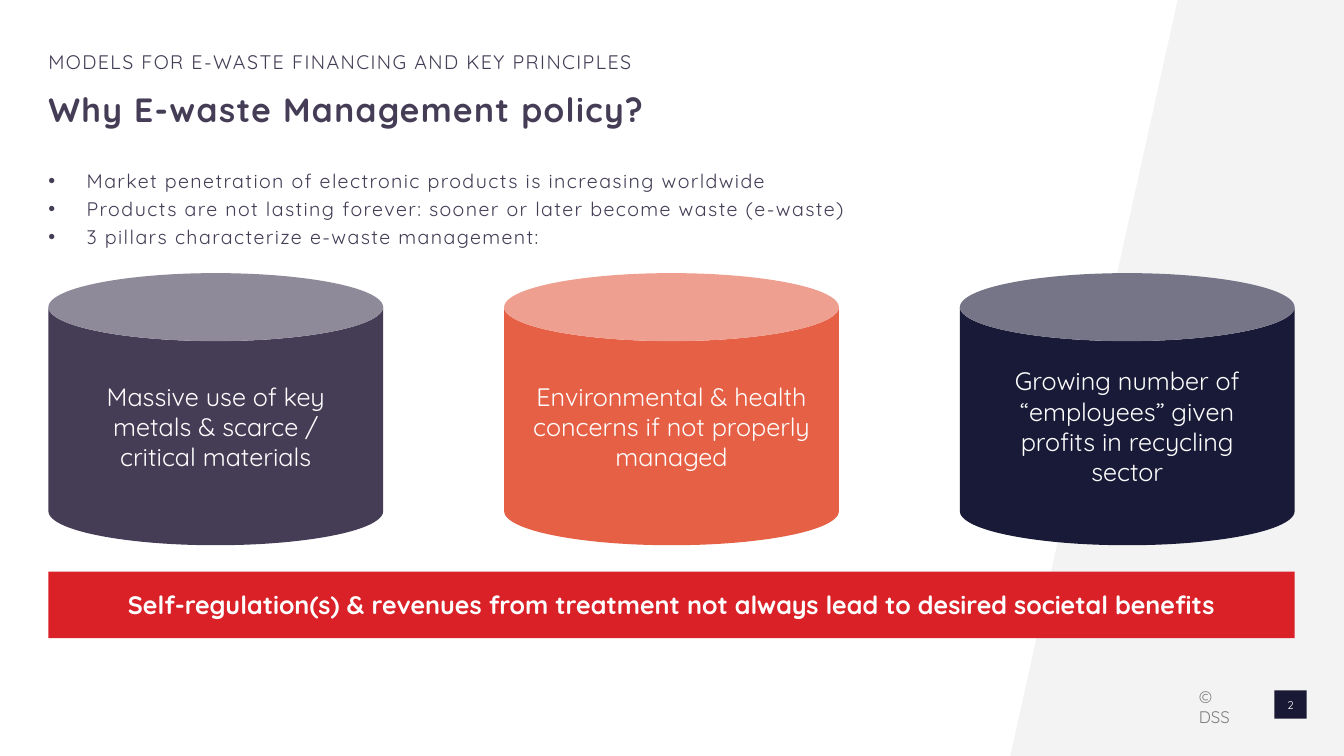
from lxml import etree
from pptx import Presentation
from pptx import util as u
from pptx.dml.color import RGBColor
from pptx.enum import shapes, text
from pptx.oxml import ns

INK = {"plum": "453D56", "coral": "E56045", "navy": "191A37", "badge": "191936",
       "red": "DA2128", "pale": "F3F3F3", "gray": "808080", "white": "FFFFFF"}
FONT = "Quicksand"
LEFT, WIDE = 0.48, 12.36
KIND = shapes.MSO_SHAPE


def paint(shape, ink):
    shape.shadow.inherit = False
    shape.fill.solid()
    shape.fill.fore_color.rgb = RGBColor.from_string(INK[ink])
    shape.line.fill.background()


def bullet(para, indent):
    props = para._p.get_or_add_pPr()
    props.set("marL", str(u.Inches(indent)))
    props.set("indent", str(-u.Inches(indent)))
    etree.SubElement(props, ns.qn("a:buFont")).set("typeface", "Arial")
    etree.SubElement(props, ns.qn("a:buChar")).set("char", "•")


def write(shape, lines, size=18, ink="white", bold=False, align="CENTER", anchor="MIDDLE",
          pad=(0.1, 0.05, 0.1, 0.05), space=1.0, track=0, indent=0):
    frame = shape.text_frame
    frame.word_wrap = True
    frame.vertical_anchor = getattr(text.MSO_ANCHOR, anchor)
    (frame.margin_left, frame.margin_top,
     frame.margin_right, frame.margin_bottom) = map(u.Inches, pad)
    frame.text = "\n".join(lines)
    for para in frame.paragraphs:
        para.alignment = getattr(text.PP_ALIGN, align)
        para.line_spacing = space
        if indent:
            bullet(para, indent)
        for run in para.runs:
            font = run.font
            font.name, font.size, font.bold = FONT, u.Pt(size), bold
            font.color.rgb = RGBColor.from_string(INK[ink])
            if track:
                run._r.get_or_add_rPr().set("spc", str(track * 100))


def block(slide, kind, box, ink):
    shape = slide.shapes.add_shape(kind, *map(u.Inches, box))
    paint(shape, ink)
    return shape


def label(slide, box, lines, **style):
    write(slide.shapes.add_textbox(*map(u.Inches, box)), lines, align="LEFT", **style)


def backdrop(slide, wide, high):
    # Slanted panel on the right
    pen = slide.shapes.build_freeform(u.Inches(11.68), 0)
    pen.add_line_segments([(u.Inches(x), u.Inches(y)) for x, y in
                           ((wide, 0), (wide, high), (10.02, high))])
    paint(pen.convert_to_shape(), "pale")


def footer(slide, x, y):
    # Page badge and copyright
    badge = block(slide, KIND.RECTANGLE, (x + 0.75, y + 0.04, 0.32, 0.28), "badge")
    write(badge, ["2"], size=8, pad=(0, 0, 0, 0))
    label(slide, (x, y, 0.4, 0.4), ["© DSS"], size=12, ink="gray",
          anchor="TOP", pad=(0, 0, 0, 0))


def header(slide, x, y, wide):
    # Section line and title
    style = dict(ink="plum", space=0.9, track=1)
    label(slide, (x, y, wide, 0.36), ["MODELS FOR E-WASTE FINANCING AND KEY PRINCIPLES"],
          size=14, pad=(0, 0.05, 0.1, 0.05), **style)
    label(slide, (x, y + 0.4, wide, 0.51), ["Why E-waste Management policy?"],
          size=24, bold=True, pad=(0, 0, 0.1, 0), **style)


def points(slide, box):
    # Bulleted list
    label(slide, box, [
        "Market penetration of electronic products is increasing worldwide",
        "Products are not lasting forever: sooner or later become waste (e-waste)",
        "3 pillars characterize e-waste management:",
    ], size=14, ink="plum", anchor="TOP", pad=(0, 0.05, 0.1, 0.05),
        space=1.2, track=1, indent=0.38)


def pillars(slide, x, y, wide, high):
    # Three cans, evenly spread
    cans = [
        ("plum", ["Massive use of key", "metals & scarce /", "critical materials"]),
        ("coral", ["Environmental & health concerns if not properly managed"]),
        ("navy", ["Growing number of “employees” given", "profits in recycling", "sector"]),
    ]
    can = 3.32
    step = (wide - can) / (len(cans) - 1)
    for i, (ink, lines) in enumerate(cans):
        write(block(slide, KIND.CAN, (x + i * step, y, can, high), ink), lines)


def banner(slide, box):
    # Closing message
    bar = block(slide, KIND.ROUNDED_RECTANGLE, box, "red")
    bar.adjustments[0] = 0
    write(bar, ["Self-regulation(s) & revenues from treatment not always "
                "lead to desired societal benefits"], bold=True)


def main():
    deck = Presentation()
    deck.slide_width, deck.slide_height = u.Inches(13.33), u.Inches(7.5)
    slide = deck.slides.add_slide(deck.slide_layouts[6])
    backdrop(slide, 13.33, 7.5)
    footer(slide, 11.89, 6.81)
    header(slide, LEFT, 0.45, WIDE)
    points(slide, (LEFT, 1.58, WIDE, 4.83))
    pillars(slide, LEFT, 2.71, WIDE, 2.7)
    banner(slide, (LEFT, 5.67, WIDE, 0.66))
    deck.save("out.pptx")


if __name__ == "__main__":
    main()
